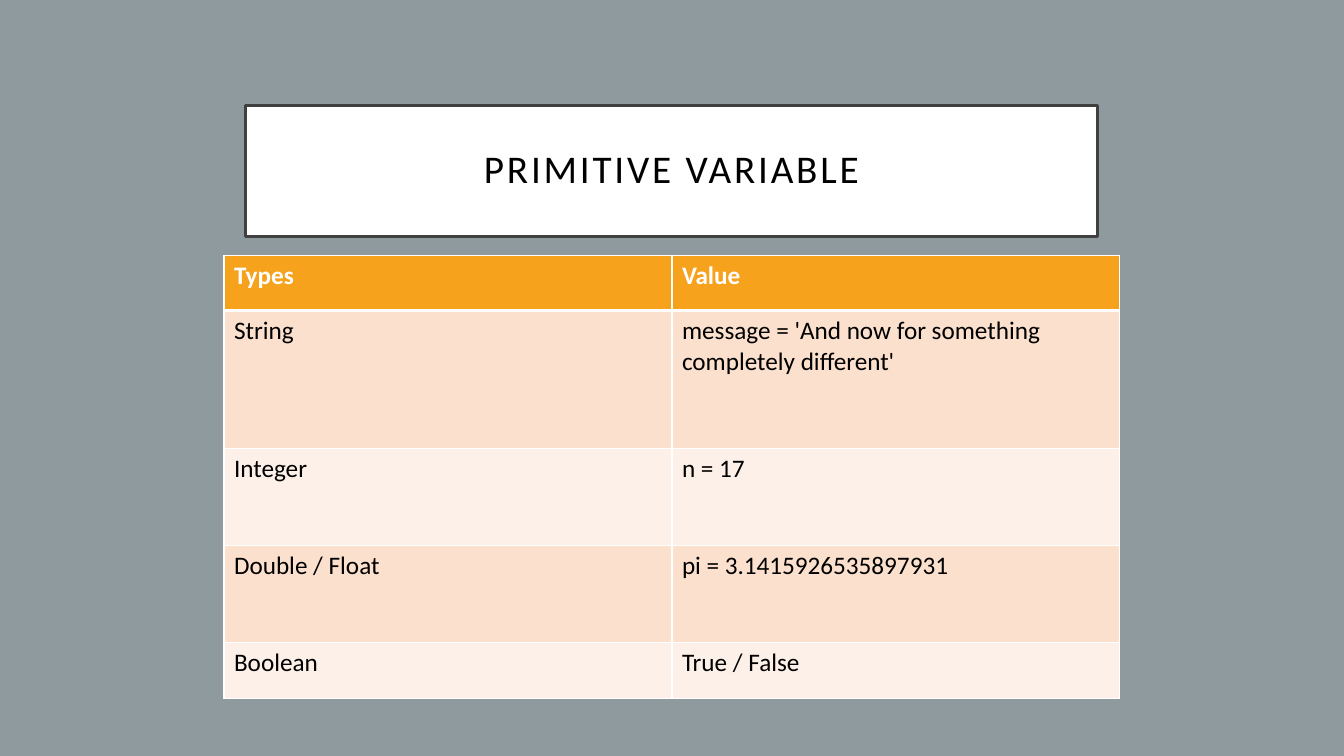
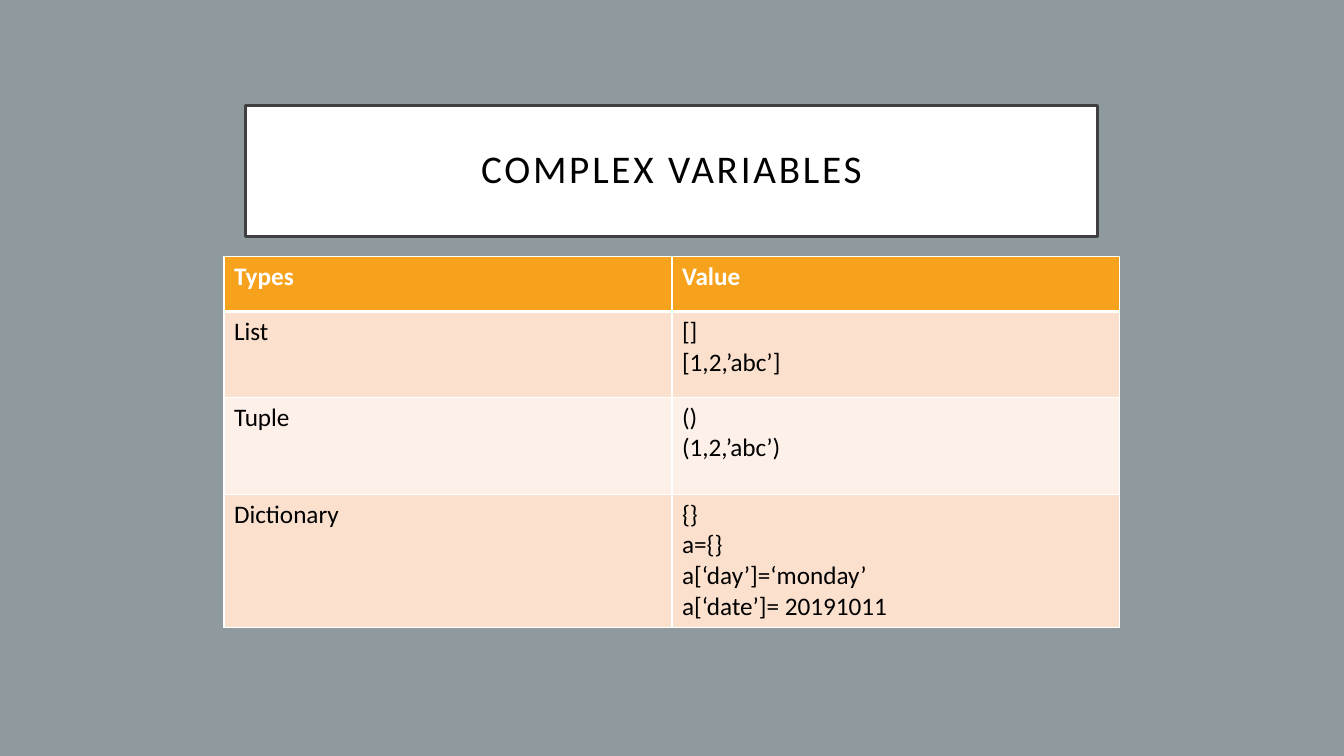
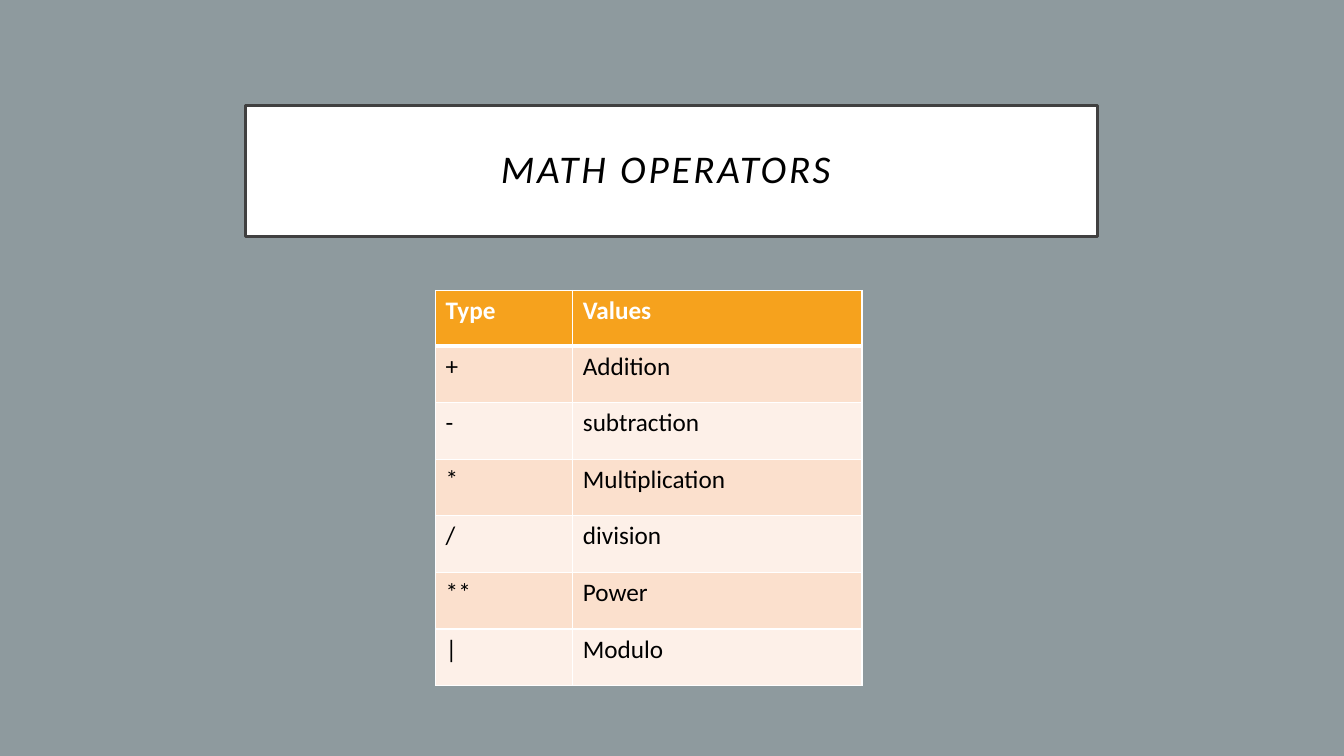
from dataclasses import dataclass

from lxml import etree
from pptx import Presentation
from pptx.dml.color import RGBColor
from pptx.enum.text import MSO_ANCHOR, MSO_AUTO_SIZE, PP_ALIGN
from pptx.oxml.ns import qn
from pptx.util import Pt

MIDDLE = MSO_ANCHOR.MIDDLE
NO_AUTOFIT = MSO_AUTO_SIZE.NONE
CENTER = PP_ALIGN.CENTER
TITLE_ONLY = 5
FONT = "Calibri"
COLORS = {
    "background": "8E9A9E",
    "white": "FFFFFF",
    "black": "000000",
    "frame": "404040",
    "header": "F6A21D",
    "odd": "FBE0CD",
    "even": "FDF0E8",
}
TITLE_PLACE = {"left": Pt(175.5), "top": Pt(75.5), "width": Pt(608.5), "height": Pt(93.5)}
TITLE_FRAME = {
    "vertical_anchor": MIDDLE,
    "auto_size": NO_AUTOFIT,
    "word_wrap": True,
    "margin_left": Pt(14.4),
    "margin_top": Pt(14.4),
    "margin_right": Pt(14.4),
    "margin_bottom": Pt(14.4),
}
TITLE_PARAGRAPH = {"alignment": CENTER, "line_spacing": 0.9}
TITLE_FONT = {"name": FONT, "size": Pt(28), "bold": False}
CELL_FONT = {"name": FONT, "size": Pt(18)}
TITLE_SPACING = "200"
THIN, THICK = Pt(1), Pt(3)


@dataclass(frozen=True)
class TablePage:
    title: str
    left: float
    top: float
    columns: tuple[float, ...]
    heights: tuple[float, ...]
    rows: tuple[tuple[str, ...], ...]
    italic: bool = False


def lines(*parts: str) -> str:
    return "\n".join(parts)


PAGES = (
    TablePage(
        "PRIMITIVE VARIABLE", 160, 182.5, (320, 320), (39.3, 98.6, 69.3, 69.3, 40),
        (
            ("Types", "Value"),
            ("String", "message = 'And now for something completely different'"),
            ("Integer", "n = 17"),
            ("Double / Float", "pi = 3.1415926535897931"),
            ("Boolean", "True / False"),
        ),
    ),
    TablePage(
        "COMPLEX VARIABLES", 160, 183.2, (320, 320), (39.3, 61.2, 69.3, 69.3),
        (
            ("Types", "Value"),
            ("List", lines("[]", "[1,2,’abc’]")),
            ("Tuple", lines("()", "(1,2,’abc’)")),
            ("Dictionary", lines("{}", "a={}", "a[‘day’]=‘monday’", "a[‘date’]= 20191011")),
        ),
    ),
    TablePage(
        "MATH OPERATORS ", 311.2, 207.4, (98, 206.6), (39.8,) + (40.45,) * 6,
        (
            ("Type", "Values"),
            ("+", "Addition"),
            ("-", "subtraction"),
            ("*", "Multiplication"),
            ("/", "division"),
            ("**", "Power"),
            ("|", "Modulo"),
        ),
        italic=True,
    ),
)


def color(name: str) -> RGBColor:
    return RGBColor.from_string(COLORS[name])


def apply(target, values: dict) -> None:
    for name, value in values.items():
        setattr(target, name, value)


def paint(fill, name: str) -> None:
    fill.solid()
    fill.fore_color.rgb = color(name)


def add_borders(cell, row_number: int) -> None:
    properties = cell._tc.get_or_add_tcPr()
    widths = {
        "a:lnL": THIN,
        "a:lnR": THIN,
        "a:lnT": THICK if row_number == 1 else THIN,
        "a:lnB": THICK if row_number == 0 else THIN,
    }
    for position, (tag, width) in enumerate(widths.items()):
        border = etree.Element(qn(tag), w=str(int(width)))
        solid = etree.SubElement(border, qn("a:solidFill"))
        etree.SubElement(solid, qn("a:srgbClr"), val=COLORS["white"])
        properties.insert(position, border)


def format_title(box, page: TablePage) -> None:
    apply(box, TITLE_PLACE)
    paint(box.fill, "white")
    box.line.width = Pt(2.5)
    paint(box.line.fill, "frame")
    apply(box.text_frame, TITLE_FRAME)
    box.text_frame.text = page.title
    paragraph = box.text_frame.paragraphs[0]
    apply(paragraph, TITLE_PARAGRAPH)
    span = paragraph.runs[0]
    apply(span.font, TITLE_FONT | {"italic": page.italic})
    span.font.color.rgb = color("black")
    span.font._element.set("spc", TITLE_SPACING)


def format_cell(cell, text: str, row_number: int) -> None:
    header = row_number == 0
    cell.text = text
    paint(cell.fill, "header" if header else ("even", "odd")[row_number % 2])
    add_borders(cell, row_number)
    for paragraph in cell.text_frame.paragraphs:
        for span in paragraph.runs:
            apply(span.font, CELL_FONT | {"bold": header})
            span.font.color.rgb = color("white" if header else "black")


def add_grid(slide, page: TablePage) -> None:
    table = slide.shapes.add_table(
        len(page.heights), len(page.columns), Pt(page.left), Pt(page.top),
        Pt(sum(page.columns)), Pt(sum(page.heights)),
    ).table
    for column, width in zip(table.columns, page.columns):
        column.width = Pt(width)
    for row_number, (row, height) in enumerate(zip(table.rows, page.heights)):
        row.height = Pt(height)
        for cell, text in zip(row.cells, page.rows[row_number]):
            format_cell(cell, text, row_number)


def main() -> None:
    deck = Presentation()
    deck.slide_width, deck.slide_height = Pt(960), Pt(540)
    paint(deck.slide_master.background.fill, "background")
    for page in PAGES:
        slide = deck.slides.add_slide(deck.slide_layouts[TITLE_ONLY])
        format_title(slide.shapes.title, page)
        add_grid(slide, page)
    deck.save("out.pptx")


if __name__ == "__main__":
    main()
